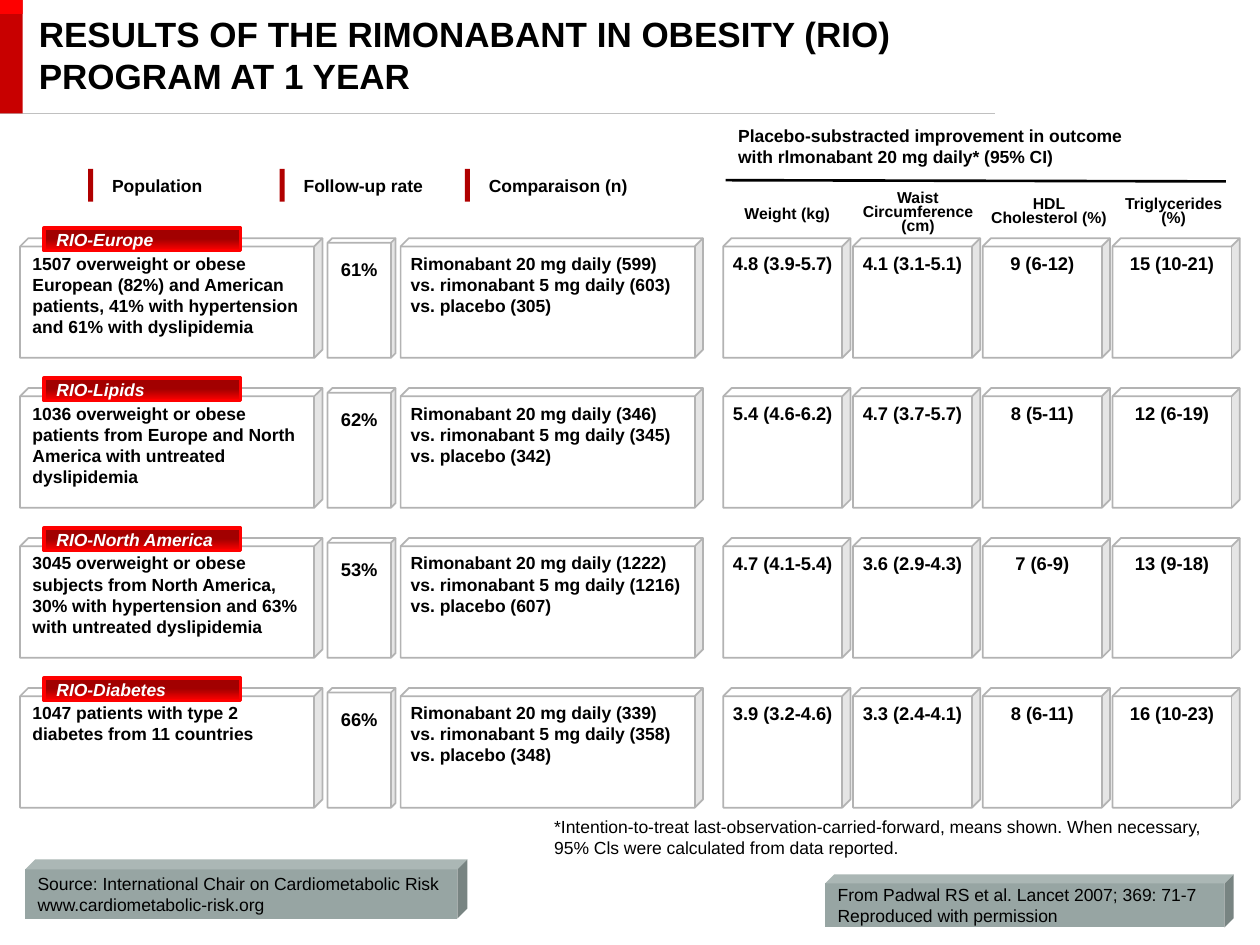
from lxml.etree import SubElement
from pptx import Presentation
from pptx.dml.color import RGBColor
from pptx.enum.shapes import MSO_CONNECTOR, MSO_SHAPE
from pptx.enum.text import MSO_ANCHOR as ANCHOR, PP_ALIGN as ALIGN
from pptx.oxml.ns import qn
from pptx.util import Inches, Pt

ROW_TOP, ROW_PITCH, ROW_HEIGHT = 1.89, 1.19, 0.95
OUTCOME_LEFT, OUTCOME_PITCH = 5.74, 1.03

TRIALS = [
    ("RIO-Europe",
     "1507 overweight or obese\nEuropean (82%) and American\npatients, 41% with hypertension\nand 61% with dyslipidemia",
     "61%", (599, 603, 305),
     ["4.8 (3.9-5.7)", "4.1 (3.1-5.1)", "9 (6-12)", "15 (10-21)"]),
    ("RIO-Lipids",
     "1036 overweight or obese\npatients from Europe and North\nAmerica with untreated\ndyslipidemia",
     "62%", (346, 345, 342),
     ["5.4 (4.6-6.2)", "4.7 (3.7-5.7)", "8 (5-11)", "12 (6-19)"]),
    ("RIO-North America",
     "3045 overweight or obese\nsubjects from North America,\n30% with hypertension and 63%\nwith untreated dyslipidemia",
     "53%", (1222, 1216, 607),
     ["4.7 (4.1-5.4)", "3.6 (2.9-4.3)", "7 (6-9)", "13 (9-18)"]),
    ("RIO-Diabetes",
     "1047 patients with type 2\ndiabetes from 11 countries",
     "66%", (339, 358, 348),
     ["3.9 (3.2-4.6)", "3.3 (2.4-4.1)", "8 (6-11)", "16 (10-23)"]),
]


def rgb(value):
    """Return the colour for a hex string."""
    return RGBColor.from_string(value)


def write(shape, text, size=10, color="000000", bold=True, italic=False, align=ALIGN.LEFT,
          anchor=ANCHOR.TOP, wrap=True, insets=(0.1, 0.05, 0.1, 0.05), spacing=None):
    """Fill a shape with one paragraph for each line of text."""
    frame = shape.text_frame
    frame.word_wrap = wrap
    frame.vertical_anchor = anchor
    frame.margin_left, frame.margin_top, frame.margin_right, frame.margin_bottom = map(Inches, insets)
    frame.text = text
    for paragraph in frame.paragraphs:
        paragraph.alignment = align
        if spacing:
            paragraph.line_spacing = Pt(spacing)
        font = paragraph.font
        font.name, font.size, font.bold, font.italic = "Arial", Pt(size), bold, italic
        font.color.rgb = rgb(color)


def add_text(slide, box, text, **style):
    """Add a text box."""
    write(slide.shapes.add_textbox(*map(Inches, box)), text, **style)


def add_block(slide, kind, box, fill):
    """Add a filled preset shape without outline."""
    shape = slide.shapes.add_shape(kind, *map(Inches, box))
    shape.shadow.inherit = False
    shape.fill.solid()
    shape.fill.fore_color.rgb = rgb(fill)
    shape.line.fill.background()
    return shape


def add_cell(slide, box, text, **style):
    """Add a half transparent cube with grey edges."""
    cube = add_block(slide, MSO_SHAPE.CUBE, box, "FFFFFF")
    cube.adjustments[0] = 0.069
    color = cube.fill._xPr.find(qn("a:solidFill"))[0]
    SubElement(color, qn("a:alpha"), val="50000")
    cube.line.color.rgb = rgb("B3B3B3")
    cube.line.width = Pt(1)
    write(cube, text, **style)


def add_tag(slide, top, text):
    """Add the red gradient name tag of a trial."""
    tag = add_block(slide, MSO_SHAPE.SNIP_1_RECTANGLE, (0.35, top, 1.56, 0.18), "A20000")
    tag.adjustments[0] = 0
    tag.fill.gradient()
    tag.fill.gradient_angle = 90
    for stop, (position, color) in zip(tag.fill.gradient_stops, [(0, "FF0000"), (0.52, "A20000")]):
        stop.position = position
        stop.color.rgb = rgb(color)
    tag.line.color.rgb = rgb("FF0000")
    tag.line.width = Pt(2)
    write(tag, text, color="FFFFFF", italic=True, anchor=ANCHOR.MIDDLE)


def add_rule(slide, start, end, color, width):
    """Add a straight line."""
    rule = slide.shapes.add_connector(MSO_CONNECTOR.STRAIGHT, *map(Inches, start + end))
    rule.line.color.rgb = rgb(color)
    rule.line.width = Pt(width)
    SubElement(rule._element.spPr, qn("a:effectLst"))


def add_column_label(slide, left, text):
    """Add a column label with its red bar."""
    label = add_block(slide, MSO_SHAPE.RECTANGLE, (left + 0.05, 1.34, 1.36, 0.26), "FFFFFF")
    write(label, text, anchor=ANCHOR.MIDDLE, insets=(0.14, 0.05, 0.04, 0.05))
    add_block(slide, MSO_SHAPE.RECTANGLE, (left, 1.34, 0.04, 0.26), "B00000")


def add_credit(slide, box, text):
    """Add a raised credit plate."""
    plate = add_block(slide, MSO_SHAPE.CUBE, box, "97A5A3")
    plate.adjustments[0] = 0.17
    write(plate, text, bold=False, anchor=ANCHOR.MIDDLE)


def add_header(slide):
    """Add the title, the red corner and all column headings."""
    add_rule(slide, (0, 0.9), (7.9, 0.9), "C0C0C0", 0.75)
    add_block(slide, MSO_SHAPE.RECTANGLE, (0, 0, 0.18, 0.9), "C80000")
    add_block(slide, MSO_SHAPE.RECTANGLE, (0, 0, 0.18, 0.11), "FE0000")
    add_text(slide, (0.21, 0.05, 9.06, 0.77),
             "RESULTS OF THE RIMONABANT IN OBESITY (RIO)\vPROGRAM AT 1 YEAR",
             size=20, anchor=ANCHOR.MIDDLE)
    for left, text in [(0.7, "Population"), (2.22, "Follow-up rate"), (3.69, "Comparaison (n)")]:
        add_column_label(slide, left, text)
    add_text(slide, (5.76, 0.94, 3.28, 0.44),
             "Placebo-substracted improvement in outcome\nwith rlmonabant 20 mg daily* (95% CI)", wrap=False)
    add_rule(slide, (5.76, 1.43), (9.73, 1.44), "000000", 1.5)
    add_text(slide, (5.81, 1.57, 0.89, 0.25), "Weight (kg)", size=9, wrap=False)
    for left, top, height, text in [(6.63, 1.48, 0.44, "Waist Circumference (cm)"),
                                    (7.67, 1.53, 0.33, "HDL\nCholesterol (%)"),
                                    (8.66, 1.53, 0.33, "Triglycerides\n(%)")]:
        add_text(slide, (left, top, 1.31, height), text, size=9, align=ALIGN.CENTER, spacing=8)


def add_trial(slide, top, name, population, rate, counts, outcomes):
    """Add one trial row."""
    high, low, placebo = counts
    comparison = (f"Rimonabant 20 mg daily ({high})\n"
                  f"vs. rimonabant 5 mg daily ({low})\nvs. placebo ({placebo})")
    add_cell(slide, (0.16, top, 2.4, ROW_HEIGHT), population)
    add_cell(slide, (2.6, top, 0.54, ROW_HEIGHT), rate, size=10.5, align=ALIGN.CENTER,
             insets=(0.1, 0.12, 0.1, 0.05))
    add_cell(slide, (3.18, top, 2.4, ROW_HEIGHT), comparison, insets=(0.08, 0.05, 0.1, 0.05))
    for column, outcome in enumerate(outcomes):
        add_cell(slide, (OUTCOME_LEFT + column * OUTCOME_PITCH, top, 1.01, ROW_HEIGHT), outcome,
                 size=10.5, align=ALIGN.CENTER, insets=(0.04, 0.05, 0.04, 0.05))
    add_tag(slide, top - 0.08, name)


def main():
    """Build and save the slide."""
    presentation = Presentation()
    presentation.slide_width, presentation.slide_height = Inches(10), Inches(7.5)
    slide = presentation.slides.add_slide(presentation.slide_layouts[6])
    add_header(slide)
    for row, trial in enumerate(TRIALS):
        add_trial(slide, ROW_TOP + row * ROW_PITCH, *trial)
    add_text(slide, (4.3, 6.43, 5.38, 0.44),
             "*Intention-to-treat last-observation-carried-forward, means shown. When necessary,\n"
             "95% Cls were calculated from data reported.", bold=False, wrap=False)
    add_credit(slide, (0.2, 6.82, 3.51, 0.47),
               "Source: International Chair on Cardiometabolic Risk\nwww.cardiometabolic-risk.org")
    add_credit(slide, (6.55, 6.94, 3.24, 0.42),
               "From Padwal RS et al. Lancet 2007; 369: 71-7\nReproduced with permission")
    presentation.save("out.pptx")


if __name__ == "__main__":
    main()
